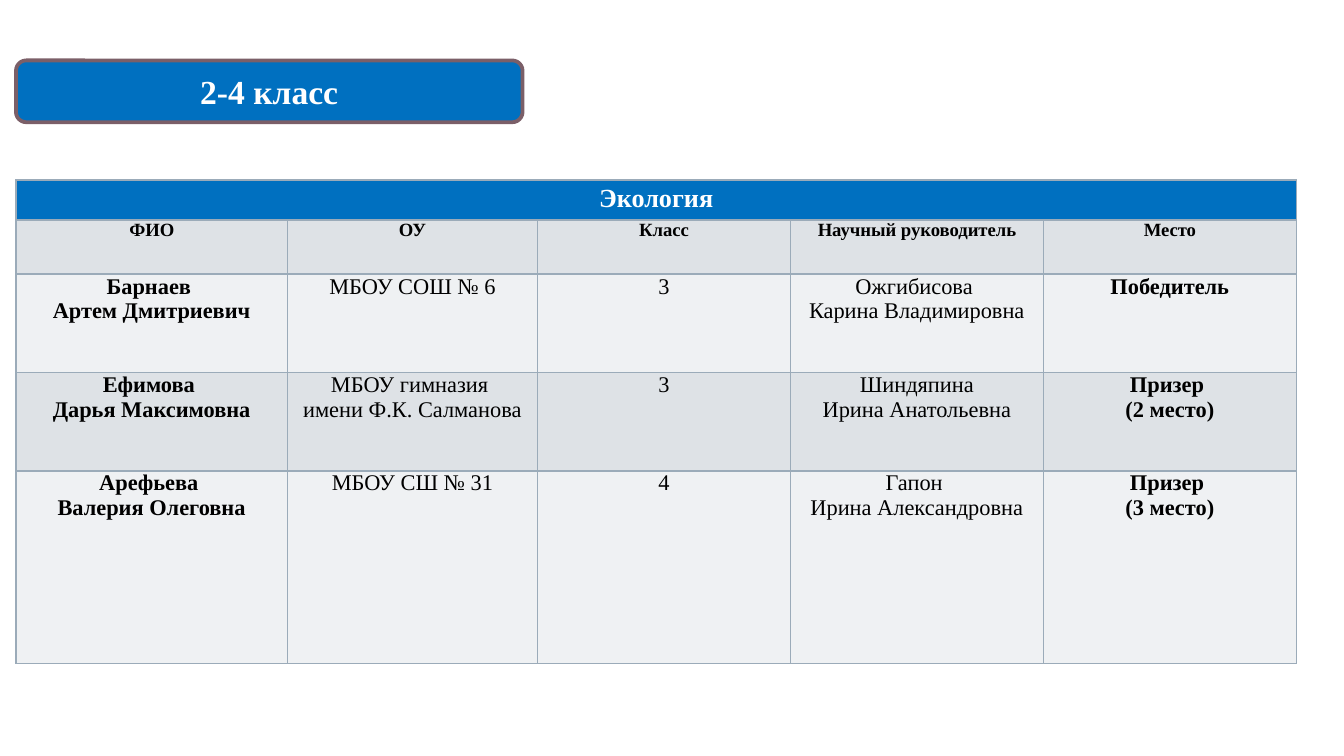
from lxml.etree import SubElement
from pptx import Presentation
from pptx.dml.color import RGBColor
from pptx.enum.shapes import MSO_SHAPE as Shape
from pptx.enum.text import MSO_ANCHOR as Anchor, PP_ALIGN as Align
from pptx.oxml.ns import qn
from pptx.util import Pt

BLUE = RGBColor(0x00, 0x70, 0xC0)
MAUVE = RGBColor(0x7B, 0x5F, 0x68)
WHITE = RGBColor(0xFF, 0xFF, 0xFF)
BLACK = RGBColor(0x00, 0x00, 0x00)
GREY = RGBColor(0xDE, 0xE2, 0xE6)
PALE = RGBColor(0xEF, 0xF1, 0xF3)
BORDER = RGBColor(0x9B, 0xAB, 0xB9)

FONT = "Times New Roman"
BADGE_BOX = (8.6, 32.4, 271.4, 33.1)
RESULTS_BOX = (8.6, 96.5, 686, 259)
COLUMN_WIDTHS = (145.4, 134, 135.5, 135.5, 135.5)
ROW_HEIGHTS = (21.3, 29.1, 52.7, 52.7, 103.2)
BOLD_COLUMNS = (0, 4)
CELL_FORMAT = {"margin_left": Pt(5), "margin_right": Pt(5),
               "margin_top": 0, "margin_bottom": 0,
               "vertical_anchor": Anchor.TOP}

SUBJECT = "Экология"
HEADINGS = ("ФИО", "ОУ", "Класс", "Научный руководитель", "Место")
WINNERS = (
    ("Барнаев \nАртем Дмитриевич", "МБОУ СОШ № 6", "3",
     "Ожгибисова \nКарина Владимировна", "Победитель"),
    ("Ефимова \nДарья Максимовна", "МБОУ гимназия \nимени Ф.К. Салманова", "3",
     "Шиндяпина\nИрина Анатольевна", "Призер \n(2 место)"),
    ("Арефьева \nВалерия Олеговна", "МБОУ СШ № 31", "4",
     "Гапон \nИрина Александровна", "Призер \n(3 место)"),
)


def write(frame, text, size, color, bold=True, spacing=None):
    """Fill a text frame with centred paragraphs, one per line of text."""
    frame.text = text
    font_format = {"name": FONT, "size": Pt(size), "bold": bold}
    for paragraph in frame.paragraphs:
        paragraph.alignment = Align.CENTER
        paragraph.line_spacing = spacing
        for run in paragraph.runs:
            for name, value in font_format.items():
                setattr(run.font, name, value)
            run.font.color.rgb = color


def style_cell(cell, color):
    for name, value in CELL_FORMAT.items():
        setattr(cell, name, value)
    properties = cell._tc.get_or_add_tcPr()
    for side in ("a:lnL", "a:lnR", "a:lnT", "a:lnB"):
        edge = SubElement(properties, qn(side), w=str(Pt(1)))
        edge_fill = SubElement(edge, qn("a:solidFill"))
        SubElement(edge_fill, qn("a:srgbClr"), val=str(BORDER))
    cell.fill.solid()
    cell.fill.fore_color.rgb = color


def add_grade_badge(slide, box, text):
    badge = slide.shapes.add_shape(Shape.ROUNDED_RECTANGLE, *map(Pt, box))
    badge.shadow.inherit = False
    badge.fill.solid()
    badge.fill.fore_color.rgb = BLUE
    badge.line.color.rgb = MAUVE
    badge.line.width = Pt(2)
    badge.text_frame.vertical_anchor = Anchor.MIDDLE
    write(badge.text_frame, text, 18, WHITE)


def add_results(slide, box):
    table = slide.shapes.add_table(
        len(ROW_HEIGHTS), len(COLUMN_WIDTHS), *map(Pt, box)).table
    for column, width in zip(table.columns, COLUMN_WIDTHS):
        column.width = Pt(width)
    for row, height in zip(table.rows, ROW_HEIGHTS):
        row.height = Pt(height)

    for r, row in enumerate(table.rows):
        band = BLUE if r == 0 else GREY if r % 2 else PALE
        for cell in row.cells:
            style_cell(cell, band)

    subject = table.cell(0, 0)
    subject.merge(table.cell(0, len(COLUMN_WIDTHS) - 1))
    write(subject.text_frame, SUBJECT, 14, WHITE, spacing=1.15)
    for c, heading in enumerate(HEADINGS):
        write(table.cell(1, c).text_frame, heading, 10, BLACK)
    for r, winner in enumerate(WINNERS, start=2):
        for c, text in enumerate(winner):
            write(table.cell(r, c).text_frame, text, 12, BLACK,
                  bold=c in BOLD_COLUMNS)


def main():
    deck = Presentation()
    deck.slide_width, deck.slide_height = Pt(720), Pt(405)
    slide = deck.slides.add_slide(deck.slide_layouts[6])
    add_results(slide, RESULTS_BOX)
    add_grade_badge(slide, BADGE_BOX, "2-4 класс")
    deck.save("out.pptx")


if __name__ == "__main__":
    main()
